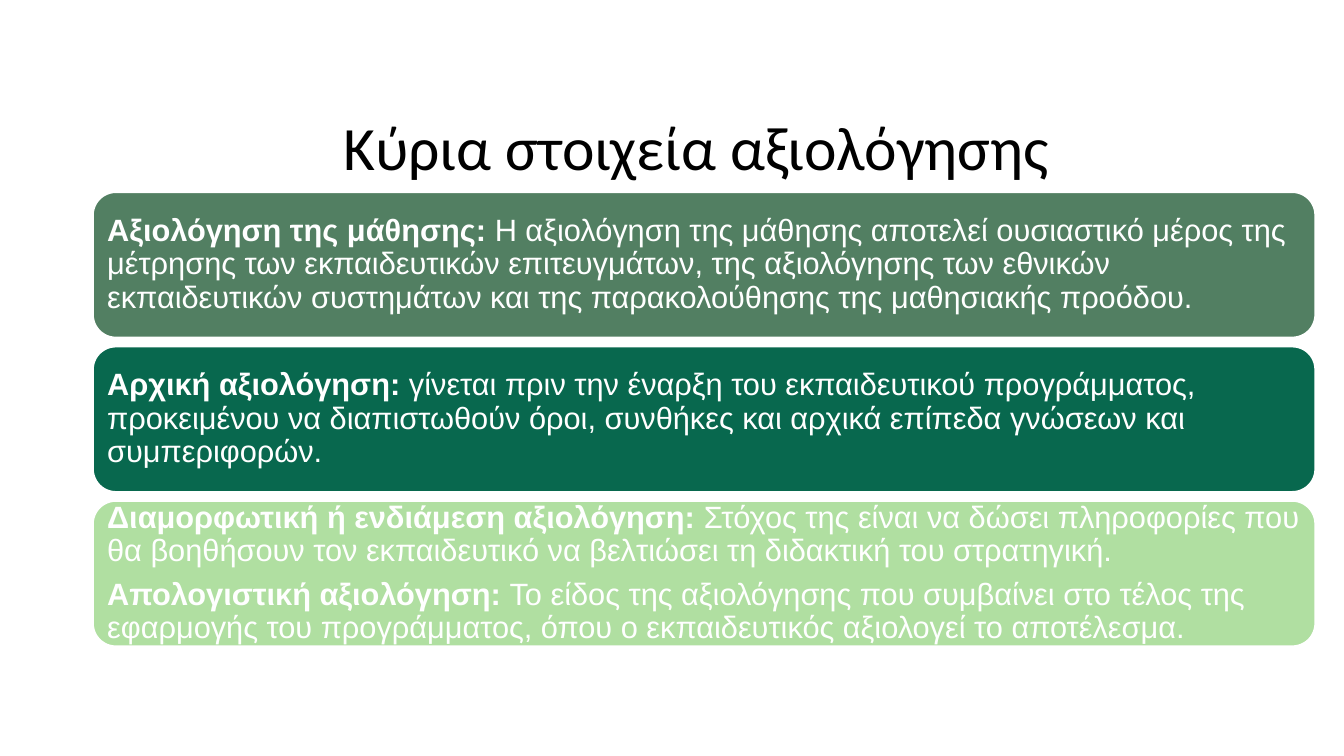
from dataclasses import dataclass

from pptx import Presentation
from pptx.dml.color import RGBColor
from pptx.enum.shapes import MSO_SHAPE
from pptx.enum.text import MSO_ANCHOR, MSO_AUTO_SIZE, PP_ALIGN
from pptx.util import Cm, Pt


@dataclass(frozen=True)
class Theme:
    black: RGBColor = RGBColor(0x00, 0x00, 0x00)
    white: RGBColor = RGBColor(0xFF, 0xFF, 0xFF)
    sage: RGBColor = RGBColor(0x52, 0x7F, 0x62)
    forest: RGBColor = RGBColor(0x08, 0x68, 0x4E)
    mint: RGBColor = RGBColor(0xB0, 0xDF, 0xA1)
    title_font: str = "Calibri"
    body_font: str = "Arial"
    title_size: Pt = Pt(44)
    body_size: Pt = Pt(22)


theme = Theme()

cards = [
    (theme.sage, [
        ("Αξιολόγηση της μάθησης: ",
         "Η αξιολόγηση της μάθησης αποτελεί ουσιαστικό μέρος της μέτρησης των "
         "εκπαιδευτικών επιτευγμάτων, της αξιολόγησης των εθνικών εκπαιδευτικών "
         "συστημάτων και της παρακολούθησης της μαθησιακής προόδου."),
    ]),
    (theme.forest, [
        ("Αρχική αξιολόγηση: ",
         "γίνεται πριν την έναρξη του εκπαιδευτικού προγράμματος, προκειμένου να "
         "διαπιστωθούν όροι, συνθήκες και αρχικά επίπεδα γνώσεων και συμπεριφορών."),
    ]),
    (theme.mint, [
        ("Διαμορφωτική ή ενδιάμεση αξιολόγηση: ",
         "Στόχος της είναι να δώσει πληροφορίες που θα βοηθήσουν τον εκπαιδευτικό "
         "να βελτιώσει τη διδακτική του στρατηγική."),
        ("Απολογιστική αξιολόγηση: ",
         "Το είδος της αξιολόγησης που συμβαίνει στο τέλος της εφαρμογής του "
         "προγράμματος, όπου ο εκπαιδευτικός αξιολογεί το αποτέλεσμα."),
    ]),
]

presentation = Presentation()
presentation.slide_width = Cm(33.87)
presentation.slide_height = Cm(19.05)
slide = presentation.slides.add_slide(presentation.slide_layouts[5])

title = slide.shapes.title
title.left, title.top, title.width, title.height = Cm(2.77), Cm(2.08), Cm(29.21), Cm(3.43)
title.text_frame.text = " Κύρια στοιχεία αξιολόγησης"
title.text_frame.vertical_anchor = MSO_ANCHOR.MIDDLE
title.text_frame.auto_size = MSO_AUTO_SIZE.NONE
heading = title.text_frame.paragraphs[0]
heading.alignment = PP_ALIGN.CENTER
heading.line_spacing = 0.9
heading_font = heading.runs[0].font
heading_font.name = theme.title_font
heading_font.size = theme.title_size
heading_font.color.rgb = theme.black

card_left, card_top = Cm(2.33), Cm(4.83)
card_width, card_height, card_gap = Cm(30.83), Cm(3.69), Cm(0.2)

for index, (color, entries) in enumerate(cards):
    card = slide.shapes.add_shape(
        MSO_SHAPE.ROUNDED_RECTANGLE,
        card_left, card_top + index * (card_height + card_gap), card_width, card_height)
    card.adjustments[0] = 0.16
    card.shadow.inherit = False
    card.fill.solid()
    card.fill.fore_color.rgb = color
    card.line.color.rgb = theme.white
    card.line.width = Pt(2)

    frame = card.text_frame
    frame.word_wrap = True
    frame.vertical_anchor = MSO_ANCHOR.MIDDLE
    frame.margin_left = frame.margin_right = Cm(0.2)
    frame.margin_top = frame.margin_bottom = Cm(0.2)
    for position, (term, description) in enumerate(entries):
        paragraph = frame.add_paragraph() if position else frame.paragraphs[0]
        paragraph.alignment = PP_ALIGN.LEFT
        paragraph.line_spacing = 0.9
        paragraph.space_after = Pt(7.7)
        for text, bold in ((term, True), (description, False)):
            run = paragraph.add_run()
            run.text = text
            run.font.name = theme.body_font
            run.font.size = theme.body_size
            run.font.bold = bold
            run.font.color.rgb = theme.white

presentation.save("out.pptx")
